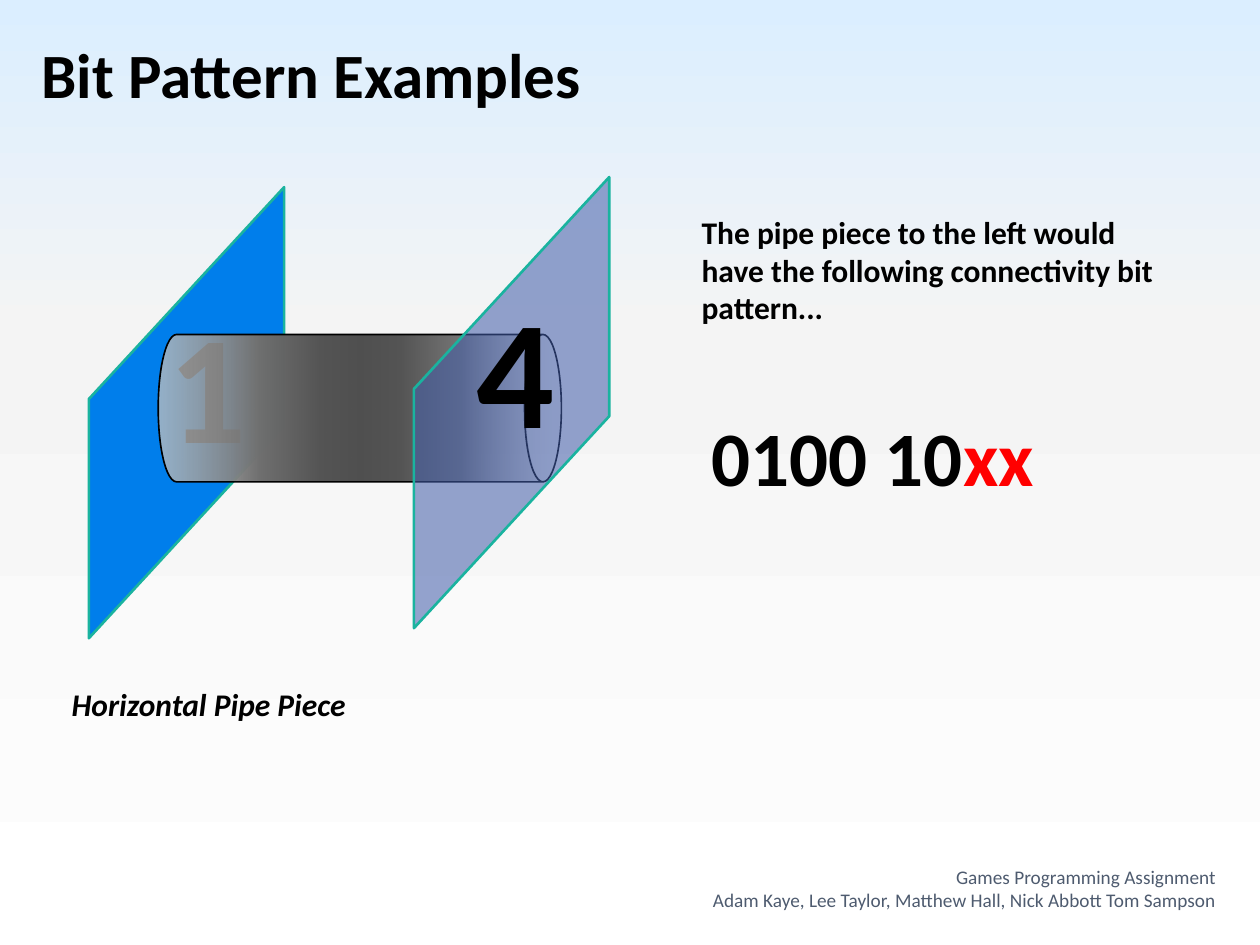
from lxml import etree
from pptx import Presentation
from pptx import util as u
from pptx.dml.color import RGBColor
from pptx.enum import shapes, text
from pptx.oxml.ns import qn

COLORS = {
    "ink": "000000", "mark": "FF0000", "credit": "4E5B6F",
    "back": "007EEB", "front": "435EAA", "edge": "1AB39F",
}
SKY = [(0, "FFFFFF", 100), (65, "F4F4F4", 100), (100, "DBEEFF", 100)]
STEEL = [
    (0, "C0C0C0", 77), (25, "707070", 100), (40, "555555", 100),
    (50, "505050", 100), (60, "555555", 100), (75, "767676", 100),
    (100, "C0C0C0", 24),
]
COLUMNS, ROWS = 100, 75


def set_alpha(color, percent):
    if percent < 100:
        etree.SubElement(color, qn("a:alpha"), val=str(percent * 1000))


class Board:
    """Draws on one slide, with lengths in columns and rows."""

    font = "Calibri"

    def __init__(self, prs):
        self.s = prs.slides.add_slide(prs.slide_layouts[6])
        self.col = prs.slide_width / COLUMNS
        self.row = prs.slide_height / ROWS

    def box(self, x, y, w, h):
        return [u.Emu(round(n)) for n in
                (x * self.col, y * self.row, w * self.col, h * self.row)]

    def gradient(self, fill, element, stops, angle, turns=True):
        """Fill with (position, colour, opacity) stops; angle is clockwise."""
        fill.gradient()
        grad = next(element.iter(qn("a:gradFill")))
        grad.set("rotWithShape", str(int(turns)))
        grad.find(qn("a:lin")).set("ang", str(angle * 60000))
        stop_list = grad.find(qn("a:gsLst"))
        for old in list(stop_list):
            stop_list.remove(old)
        for position, color, opacity in stops:
            gs = etree.SubElement(stop_list, qn("a:gs"), pos=str(position * 1000))
            set_alpha(etree.SubElement(gs, qn("a:srgbClr"), val=color), opacity)

    def background(self, stops, angle):
        self.gradient(self.s.background.fill, self.s.element, stops, angle)

    def flipped(self, kind, place, rotation, line, width):
        sp = self.s.shapes.add_shape(kind, *self.box(*place))
        sp.rotation = rotation
        sp.element.spPr.find(qn("a:xfrm")).set("flipV", "1")
        sp.shadow.inherit = False
        sp.line.color.rgb = RGBColor.from_string(COLORS[line])
        sp.line.width = u.Pt(width)
        return sp

    def panel(self, x, y, color, opacity=100):
        sp = self.flipped(shapes.MSO_SHAPE.PARALLELOGRAM, (x, y, 35.8, 15.5),
                          90, "edge", 1.5)
        sp.adjustments[0] = 1.085
        sp.fill.solid()
        sp.fill.fore_color.rgb = RGBColor.from_string(COLORS[color])
        set_alpha(next(sp.element.spPr.iter(qn("a:srgbClr"))), opacity)

    def pipe(self, x, y, w, h):
        sp = self.flipped(shapes.MSO_SHAPE.CAN, (x, y, w, h), 270, "ink", 0.94)
        self.gradient(sp.fill, sp.element, STEEL, 0, turns=False)

    def label(self, place, paragraphs, size, bold=True, italic=False,
              align=text.PP_ALIGN.LEFT, anchor=text.MSO_ANCHOR.TOP):
        """Each paragraph is a list of (wording, colour) runs."""
        tf = self.s.shapes.add_textbox(*self.box(*place)).text_frame
        tf.word_wrap = True
        tf.vertical_anchor = anchor
        if anchor == text.MSO_ANCHOR.TOP:
            tf.auto_size = text.MSO_AUTO_SIZE.SHAPE_TO_FIT_TEXT
        for i, runs in enumerate(paragraphs):
            p = tf.add_paragraph() if i else tf.paragraphs[0]
            p.alignment = align
            for wording, color in runs:
                r = p.add_run()
                r.text = wording
                r.font.name, r.font.size = self.font, u.Pt(size)
                r.font.bold, r.font.italic = bold, italic
                r.font.color.rgb = RGBColor.from_string(COLORS[color])


def main():
    prs = Presentation()
    prs.slide_width, prs.slide_height = u.Inches(10), u.Inches(7.5)
    board = Board(prs)
    board.background(SKY, 270)

    board.panel(-3.1, 25, "back")
    board.label((12.4, 22.5, 11.4, 15.4), [[("1", "ink")]], 88)
    board.pipe(22.7, 16.4, 11.7, 32)
    board.label((2.3, 2.3, 63.3, 7.1), [[("Bit Pattern Examples", "ink")]], 36)
    board.panel(22.7, 24.2, "front", 56)
    board.label((36.8, 21.3, 11.4, 15.4), [[("4", "ink")]], 88)

    board.label((54.7, 16.4, 39.1, 10.1), [[(
        "The pipe piece to the left would have the following "
        "connectivity bit pattern...", "ink")]], 18)
    board.label((55.5, 32, 36.7, 8.4),
                [[("0100 10", "ink"), ("xx", "mark")]], 44)
    board.label((4.7, 53.9, 33.6, 4), [[("Horizontal Pipe Piece", "ink")]],
                18, italic=True)
    board.label((36.7, 68.8, 60.8, 4), [
        [("Games Programming Assignment", "credit")],
        [("Adam Kaye, Lee Taylor, Matthew Hall, Nick Abbott Tom Sampson", "credit")],
    ], 11, bold=False, align=text.PP_ALIGN.RIGHT, anchor=text.MSO_ANCHOR.BOTTOM)

    prs.save("out.pptx")


if __name__ == "__main__":
    main()
